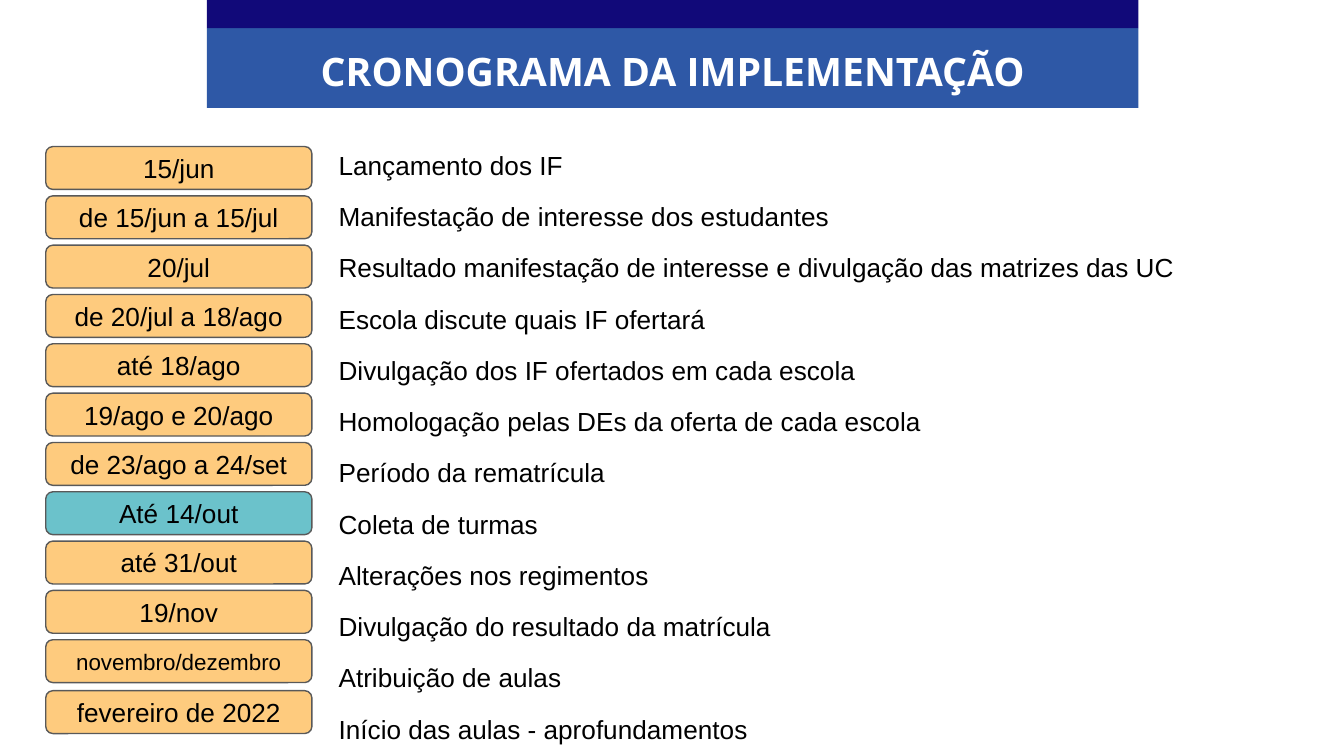
from lxml.etree import SubElement
from pptx import Presentation
from pptx.dml.color import RGBColor
from pptx.enum.shapes import MSO_SHAPE
from pptx.enum.text import MSO_ANCHOR, MSO_AUTO_SIZE, PP_ALIGN
from pptx.oxml.ns import qn
from pptx.util import Pt

ORANGE = RGBColor(0xFE, 0xA6, 0x21)
TEAL = RGBColor(0x00, 0x97, 0xA7)
GRAY = RGBColor(0x59, 0x59, 0x59)
BLUE = RGBColor(0x2E, 0x58, 0xA6)
NAVY = RGBColor(0x11, 0x09, 0x79)
BLACK = RGBColor(0x00, 0x00, 0x00)
WHITE = RGBColor(0xFF, 0xFF, 0xFF)

BANNER_LEFT, BANNER_WIDTH = 110.9, 499
DATE_TOP, DATE_PITCH, LAST_DATE_TOP = 78.5, 26.42, 370

SCHEDULE = [
    ("15/jun", "Lançamento dos IF"),
    ("de 15/jun a 15/jul", "Manifestação de interesse dos estudantes"),
    ("20/jul", "Resultado manifestação de interesse e divulgação das matrizes das UC"),
    ("de 20/jul a 18/ago", "Escola discute quais IF ofertará"),
    ("até 18/ago", "Divulgação dos IF ofertados em cada escola"),
    ("19/ago e 20/ago", "Homologação pelas DEs da oferta de cada escola"),
    ("de 23/ago a 24/set", "Período da rematrícula"),
    ("Até 14/out", "Coleta de turmas"),
    ("até 31/out", "Alterações nos regimentos"),
    ("19/nov", "Divulgação do resultado da matrícula"),
    ("novembro/dezembro", "Atribuição de aulas"),
    ("fevereiro de 2022", "Início das aulas - aprofundamentos"),
]


def place(shape, left, top, width, height):
    shape.left, shape.top = Pt(left), Pt(top)
    shape.width, shape.height = Pt(width), Pt(height)


def set_frame(frame, anchor, vertical_inset):
    frame.word_wrap = True
    frame.auto_size = MSO_AUTO_SIZE.NONE
    frame.vertical_anchor = anchor
    frame.margin_left = frame.margin_right = Pt(7.2)
    frame.margin_top = frame.margin_bottom = Pt(vertical_inset)


def style_paragraph(para, size, color=BLACK, name="Arial", bold=False,
                    align=PP_ALIGN.LEFT):
    para.alignment = align
    para.font.size = Pt(size)
    para.font.name = name
    para.font.bold = bold
    para.font.color.rgb = color


def add_banner_band(page, top, height, color):
    band = page.shapes.add_shape(MSO_SHAPE.RECTANGLE, Pt(BANNER_LEFT), Pt(top),
                                 Pt(BANNER_WIDTH), Pt(height))
    band.shadow.inherit = False
    band.fill.solid()
    band.fill.fore_color.rgb = color
    band.line.fill.background()


def set_title(page, text):
    title = page.shapes.title
    place(title, BANNER_LEFT, 21.6, BANNER_WIDTH, 32.4)
    set_frame(title.text_frame, MSO_ANCHOR.TOP, 3.6)
    para = title.text_frame.paragraphs[0]
    para.text = text
    style_paragraph(para, 21, WHITE, "Open Sans", True, PP_ALIGN.CENTER)
    title.element.getparent().append(title.element)


def remove_bullet(para):
    properties = para._p.get_or_add_pPr()
    properties.set("marL", "0")
    properties.set("indent", "0")
    SubElement(properties, qn("a:buNone"))


def set_activities(page, activities):
    body = page.placeholders[1]
    place(body, 174.2, 72, 499, 329)
    frame = body.text_frame
    set_frame(frame, MSO_ANCHOR.TOP, 7.2)
    frame.text = "\n".join(activities)
    for index, para in enumerate(frame.paragraphs):
        style_paragraph(para, 14)
        para.line_spacing = 1.04
        para.space_before = Pt(10 if index else 0)
        para.space_after = Pt(0)
        remove_bullet(para)
    frame.paragraphs[-1].space_after = Pt(10)


def add_date(page, top, text, color, size):
    box = page.shapes.add_shape(MSO_SHAPE.ROUNDED_RECTANGLE, Pt(24.5), Pt(top),
                                Pt(142.6), Pt(23))
    box.shadow.inherit = False
    box.fill.solid()
    box.fill.fore_color.rgb = color
    color_node = box.element.spPr.find(qn("a:solidFill"))[0]
    SubElement(color_node, qn("a:alpha"), val="58000")
    box.line.color.rgb = GRAY
    box.line.width = Pt(0.75)
    set_frame(box.text_frame, MSO_ANCHOR.MIDDLE, 7.2)
    para = box.text_frame.paragraphs[0]
    para.text = text
    style_paragraph(para, size, align=PP_ALIGN.CENTER)


def main():
    deck = Presentation()
    deck.slide_width, deck.slide_height = Pt(720), Pt(405)
    page = deck.slides.add_slide(deck.slide_layouts[1])
    set_activities(page, [activity for _, activity in SCHEDULE])
    add_banner_band(page, 15.1, 42.7, BLUE)
    add_banner_band(page, 0, 15.1, NAVY)
    set_title(page, "CRONOGRAMA DA IMPLEMENTAÇÃO")
    last = len(SCHEDULE) - 1
    for index, (date, _) in enumerate(SCHEDULE):
        top = LAST_DATE_TOP if index == last else DATE_TOP + index * DATE_PITCH
        color = TEAL if date == "Até 14/out" else ORANGE
        size = 12 if date == "novembro/dezembro" else 14
        add_date(page, top, date, color, size)
    deck.save("out.pptx")


if __name__ == "__main__":
    main()
